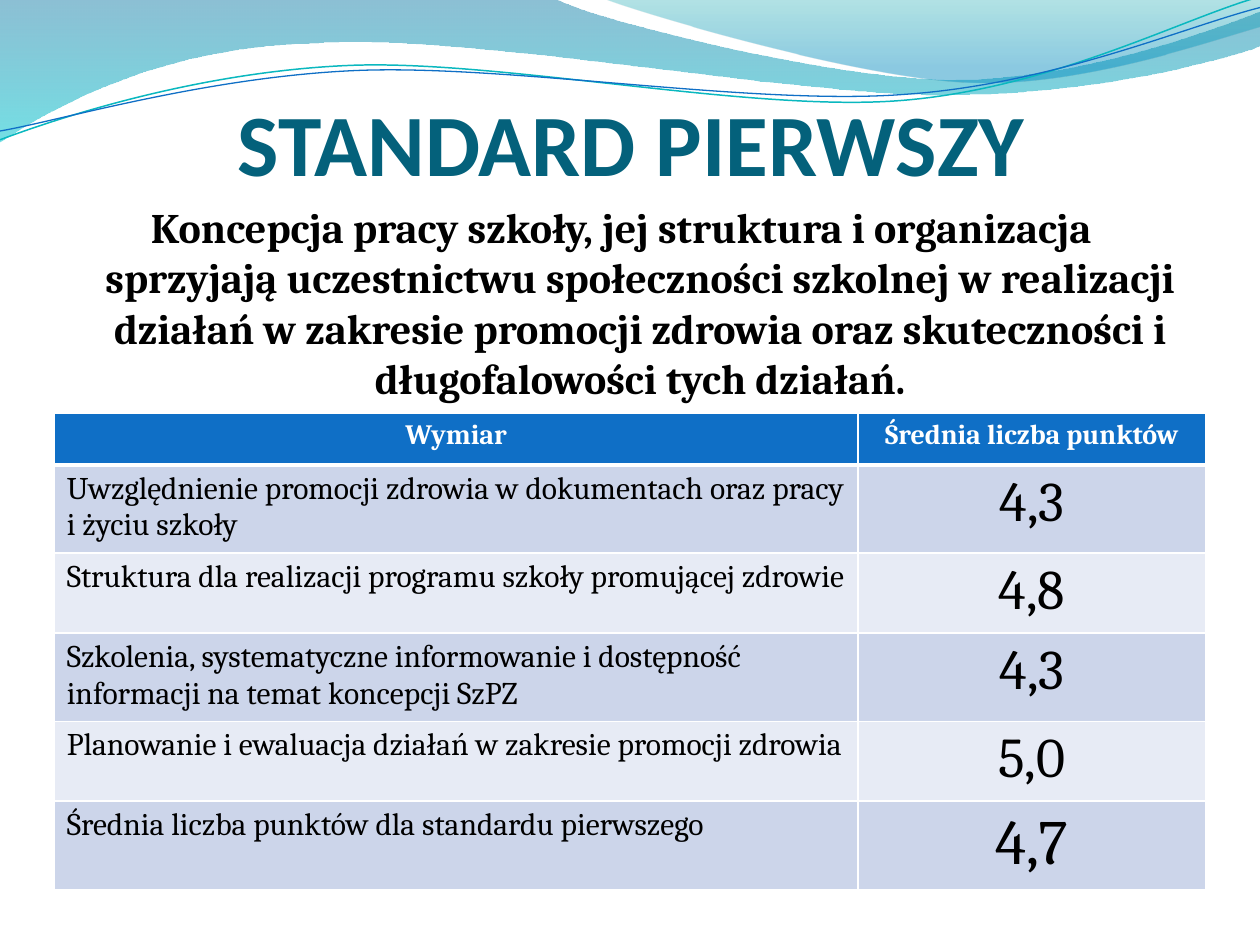
from lxml.etree import SubElement
from pptx import Presentation
from pptx.dml.color import RGBColor
from pptx.enum.text import MSO_ANCHOR, PP_ALIGN
from pptx.oxml.ns import qn
from pptx.util import Inches, Pt

SUBTITLE = ("Koncepcja pracy szkoły, jej struktura i organizacja sprzyjają "
            "uczestnictwu społeczności szkolnej w realizacji działań w zakresie "
            "promocji zdrowia oraz skuteczności i długofalowości tych działań.")
HEADERS = ["Wymiar", "Średnia liczba punktów"]
SCORES = [
    ("Uwzględnienie promocji zdrowia w dokumentach oraz pracy i życiu szkoły", "4,3"),
    ("Struktura dla realizacji programu szkoły promującej zdrowie", "4,8"),
    ("Szkolenia, systematyczne informowanie i dostępność informacji "
     "na temat koncepcji SzPZ", "4,3"),
    ("Planowanie i ewaluacja działań w zakresie promocji zdrowia", "5,0"),
    ("Średnia liczba punktów dla standardu pierwszego", "4,7"),
]

# Outlines in inches: a pair is a straight step, six numbers are a Bézier step.
WIDE_WAVE = [
    (0, 0), (4.4, -0.01), (4.76, 0.17, 6.64, 0.63, 7.58, 0.63),
    (8.53, 0.63, 9.58, 0.26, 10, 0.09), (10.01, 0.36),
    (9.83, 0.44, 8.7, 0.76, 7.46, 0.75), (6.22, 0.75, 3.82, 0.28, 2.57, 0.34),
    (1.29, 0.36, 0.46, 0.83, -0.01, 1.13)]
RIGHT_WAVE = [
    (4.79, -0.01), (5.09, 0.11, 6.82, 0.62, 7.69, 0.65),
    (8.56, 0.69, 9.61, 0.32, 10, 0.21), (10, 0)]
TEAL_LINE = [
    (0, 1.11), (0.48, 0.93, 1.58, 0.57, 2.77, 0.52),
    (3.95, 0.47, 5.93, 0.89, 7.13, 0.8), (8.33, 0.71, 9.38, 0.15, 9.98, -0.02)]
BLUE_LINE = [
    (0, 1.04), (0.47, 0.96, 1.64, 0.61, 2.83, 0.56),
    (4.03, 0.51, 5.97, 0.84, 7.17, 0.75), (8.36, 0.67, 9.41, 0.21, 10, 0.06)]


def rgb(value):
    return RGBColor.from_string(value)


def add_curve(slide, steps, close):
    """Build the outline through its end points, then bend the Bézier steps."""
    start, *ends = [tuple(map(Inches, step[-2:])) for step in steps]
    builder = slide.shapes.build_freeform(*start)
    builder.add_line_segments(ends, close=close)
    sp = builder.convert_to_shape()
    sp.shadow.inherit = False
    segments = list(sp._element.iter(qn("a:lnTo")))
    for segment, step in zip(segments, steps[1:]):
        if len(step) == 6:
            bend = SubElement(segment.getparent(), qn("a:cubicBezTo"))
            for x, y in zip(step[::2], step[1::2]):
                SubElement(bend, qn("a:pt"), x=str(Inches(x) - sp.left),
                           y=str(Inches(y) - sp.top))
            segment.getparent().replace(segment, bend)
    return sp


def add_wave(slide, steps, stops):
    """Add a filled wave; each stop is position, colour and opacity in percent."""
    sp = add_curve(slide, steps, close=True)
    sp.line.fill.background()
    sp.fill.gradient()
    sp.fill.gradient_angle = 270
    for stop, (position, colour, _) in zip(sp.fill.gradient_stops, stops):
        stop.position = position
        stop.color.rgb = rgb(colour)
    colours = sp._element.spPr.iter(qn("a:srgbClr"))
    for clr, (_, _, opacity) in zip(colours, stops):
        SubElement(clr, qn("a:alpha"), val=str(opacity * 1000))


def add_wave_line(slide, steps, colour, width):
    sp = add_curve(slide, steps, close=False)
    sp.fill.background()
    sp.line.color.rgb = rgb(colour)
    sp.line.width = Pt(width)


def add_waves(slide):
    add_wave(slide, WIDE_WAVE, [(0, "0074A1", 45), (1, "00C6CF", 55)])
    add_wave(slide, RIGHT_WAVE, [(0, "00A1A9", 30), (0.8, "008BBF", 45)])
    add_wave_line(slide, TEAL_LINE, "0AB8BF", 0.85)
    add_wave_line(slide, BLUE_LINE, "0F6FC6", 0.75)


def write(tf, text, size, colour, font="Cambria", bold=False, align=PP_ALIGN.CENTER):
    p = tf.paragraphs[0]
    p.text = text
    p.alignment = align
    f = p.runs[0].font
    f.name, f.size, f.bold = font, Pt(size), bold
    f.color.rgb = rgb(colour)
    return p


def add_title(slide, box):
    tf = slide.shapes.add_textbox(*map(Inches, box)).text_frame
    tf.word_wrap = True
    tf.vertical_anchor = MSO_ANCHOR.BOTTOM
    tf.margin_left = tf.margin_right = tf.margin_bottom = 0
    write(tf, "STANDARD PIERWSZY", 50, "04617B", "Calibri", bold=True)


def add_subtitle(slide, box):
    tf = slide.shapes.add_textbox(*map(Inches, box)).text_frame
    tf.word_wrap = True
    p = write(tf, SUBTITLE, 24, "000000", bold=True)
    p.space_before = Pt(4.8)
    pPr = p._p.get_or_add_pPr()
    pPr.set("marL", str(Inches(0.3)))
    pPr.set("indent", str(-Inches(0.3)))


def fill_cell(cell, colour):
    cell.fill.solid()
    cell.fill.fore_color.rgb = rgb(colour)


def border_header(cell):
    """Give a header cell white borders, the lower one thick."""
    tcPr = cell._tc.get_or_add_tcPr()
    for side, width in (("L", 1), ("R", 1), ("T", 1), ("B", 3)):
        ln = SubElement(tcPr, qn(f"a:ln{side}"), w=str(Pt(width)))
        SubElement(SubElement(ln, qn("a:solidFill")), qn("a:srgbClr"), val="FFFFFF")


def add_score_table(slide, box):
    left, top, width, row_height = map(Inches, box)
    count = len(SCORES) + 1
    table = slide.shapes.add_table(count, 2, left, top, width, row_height * count).table
    table.columns[0].width = Inches(6.38)
    table.columns[1].width = width - Inches(6.38)
    for col, header in enumerate(HEADERS):
        cell = table.cell(0, col)
        border_header(cell)
        fill_cell(cell, "0F6FC6")
        write(cell.text_frame, header, 16, "FFFFFF", bold=True)
    for row, (label, score) in enumerate(SCORES, 1):
        name_cell, score_cell = table.rows[row].cells
        for cell in (name_cell, score_cell):
            fill_cell(cell, "CCD5EA" if row % 2 else "E7EBF5")
        write(name_cell.text_frame, label, 18, "000000", align=PP_ALIGN.LEFT)
        write(score_cell.text_frame, score, 36 if row == len(SCORES) else 32, "000000")


def main():
    prs = Presentation()
    prs.slide_width, prs.slide_height = Inches(10), Inches(7.5)
    slide = prs.slides.add_slide(prs.slide_layouts[6])
    add_waves(slide)
    add_title(slide, (0.51, 0.29, 9, 1.25))
    add_subtitle(slide, (0.43, 1.55, 9, 5.67))
    add_score_table(slide, (0.43, 3.28, 9.14, 0.41))
    prs.save("out.pptx")


if __name__ == "__main__":
    main()
